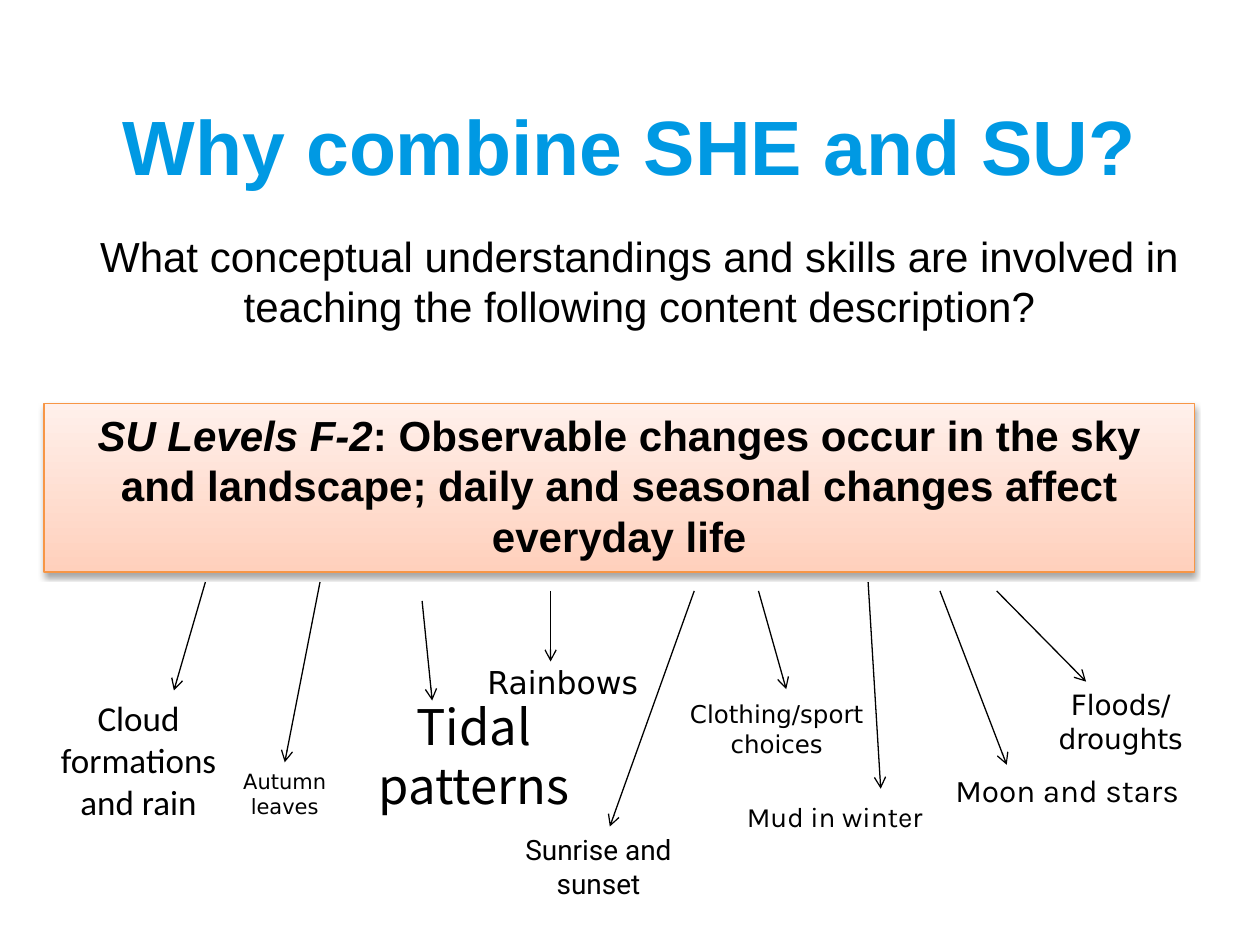
import pptx
import pptx.dml.color
import pptx.enum.shapes
import pptx.enum.text
import pptx.oxml
import pptx.oxml.ns
import pptx.util

SCALE = 9144
NS = pptx.oxml.ns.nsdecls("a")
ALIGN = pptx.enum.text.PP_ALIGN
ANCHOR = pptx.enum.text.MSO_ANCHOR
FIT = pptx.enum.text.MSO_AUTO_SIZE
BLACK = "000000"

TOPICS = [
    ("Cloud formations and rain", "Calibri", 20, (0, 88, 150, 111), (128, 2, 103, 88)),
    ("Tidal patterns", "Noto Sans CJK SC", 28, (242, 88, 198, 104), (300, 17, 308, 96)),
    ("Moon and stars", "Karla", 18, (694, 147, 236, 40), (711, 9, 764, 147)),
    ("Clothing/sport choices", "DejaVu Sans", 14, (500, 90, 163, 57), (567, 9, 589, 87)),
    ("Sunrise and sunset", "Roboto", 16, (363, 196, 154, 64), (516, 9, 449, 196)),
    ("Autumn leaves", "DejaVu Sans", 12, (128, 145, 126, 50), (219, 2, 191, 145)),
    ("Mud in winter", "Karla", 16, (544, 170, 167, 37), (654, 2, 664, 166)),
    ("Floods/ droughts", "DejaVu Sans", 16, (764, 81, 181, 64), (756, 9, 827, 81)),
    ("Rainbows", "DejaVu Sans", 18, (342, 61, 141, 40), (402, 9, 402, 65)),
]


def px(*nums):
    """Turn px lengths into EMU."""
    return [pptx.util.Emu(n * SCALE) for n in nums]


def tint(code):
    """Turn a hex string into a colour."""
    return pptx.dml.color.RGBColor.from_string(code)


def write(shape, runs, font, size, color=BLACK, align=ALIGN.CENTER, **frame):
    """Write one paragraph of (text, format) runs into a shape."""
    body = shape.text_frame
    for name, value in {"word_wrap": True, **frame}.items():
        setattr(body, name, value)
    para = body.paragraphs[0]
    para.alignment = align
    for text, extra in runs:
        run = para.add_run()
        run.text = text
        form = {"name": font, "size": pptx.util.Pt(size), **extra}
        for name, value in form.items():
            setattr(run.font, name, value)
        run.font.color.rgb = tint(color)


def head(slide, box):
    """Place the title."""
    shape = slide.shapes.add_textbox(*px(*box))
    write(shape, [("Why combine SHE and SU?", {"bold": True})], "Arial", 44,
          "0099E3", vertical_anchor=ANCHOR.MIDDLE)


def ask(slide, box):
    """Place the question below the title."""
    text = ("What conceptual understandings and skills are involved in "
            "teaching the following content description?")
    shape = slide.shapes.add_textbox(*px(*box))
    write(shape, [(text, {})], "Arial", 24, auto_size=FIT.SHAPE_TO_FIT_TEXT)


def panel(slide, box):
    """Place the shaded panel with the content description."""
    shape = slide.shapes.add_shape(
        pptx.enum.shapes.MSO_SHAPE.RECTANGLE, *px(*box))
    shape.shadow.inherit = False
    shape.fill.gradient()
    shape.fill.gradient_angle = 270
    for stop, code in zip(shape.fill.gradient_stops, ("FFF0EB", "FFD0BC")):
        stop.color.rgb = tint(code)
    shape.line.color.rgb = tint("F79646")
    shape.line.width = pptx.util.Pt(0.75)
    shade = pptx.oxml.parse_xml(
        f'<a:outerShdw {NS} blurRad="40000" dist="23000" dir="5400000" '
        'rotWithShape="0"><a:srgbClr val="000000"><a:alpha val="35000"/>'
        '</a:srgbClr></a:outerShdw>')
    shape._element.spPr.find(pptx.oxml.ns.qn("a:effectLst")).append(shade)
    runs = [
        ("SU Levels F-2", {"bold": True, "italic": True}),
        (": Observable changes occur in the sky and landscape; daily and "
         "seasonal changes affect everyday life", {"bold": True}),
    ]
    write(shape, runs, "Arial", 24, vertical_anchor=ANCHOR.TOP)


def arrow(slide, ends):
    """Draw a thin line with an open arrowhead at its end."""
    line = slide.shapes.add_connector(
        pptx.enum.shapes.MSO_CONNECTOR.STRAIGHT, *px(*ends))
    line.line.color.rgb = tint(BLACK)
    line.line.width = pptx.util.Pt(0.75)
    line.line._get_or_add_ln().append(
        pptx.oxml.parse_xml(f'<a:tailEnd {NS} type="arrow"/>'))
    line._element.spPr.append(pptx.oxml.parse_xml(f"<a:effectLst {NS}/>"))


def fan(slide, box):
    """Place the topics and the arrows that lead to them."""
    left, top = box[:2]
    for text, font, size, (x, y, w, h), (x1, y1, x2, y2) in TOPICS:
        shape = slide.shapes.add_textbox(*px(left + x, top + y, w, h))
        align = ALIGN.LEFT if text == "Rainbows" else ALIGN.CENTER
        write(shape, [(text, {})], font, size, align=align,
              auto_size=FIT.SHAPE_TO_FIT_TEXT)
        arrow(slide, (left + x1, top + y1, left + x2, top + y2))


def main():
    """Build and save the slide."""
    deck = pptx.Presentation()
    deck.slide_width, deck.slide_height = px(1000, 750)
    slide = deck.slides.add_slide(deck.slide_layouts[6])
    head(slide, (75, 67, 850, 96))
    panel(slide, (35, 320, 913, 134))
    ask(slide, (35, 178, 945, 91))
    fan(slide, (35, 460, 945, 260))
    deck.save("out.pptx")


if __name__ == "__main__":
    main()
